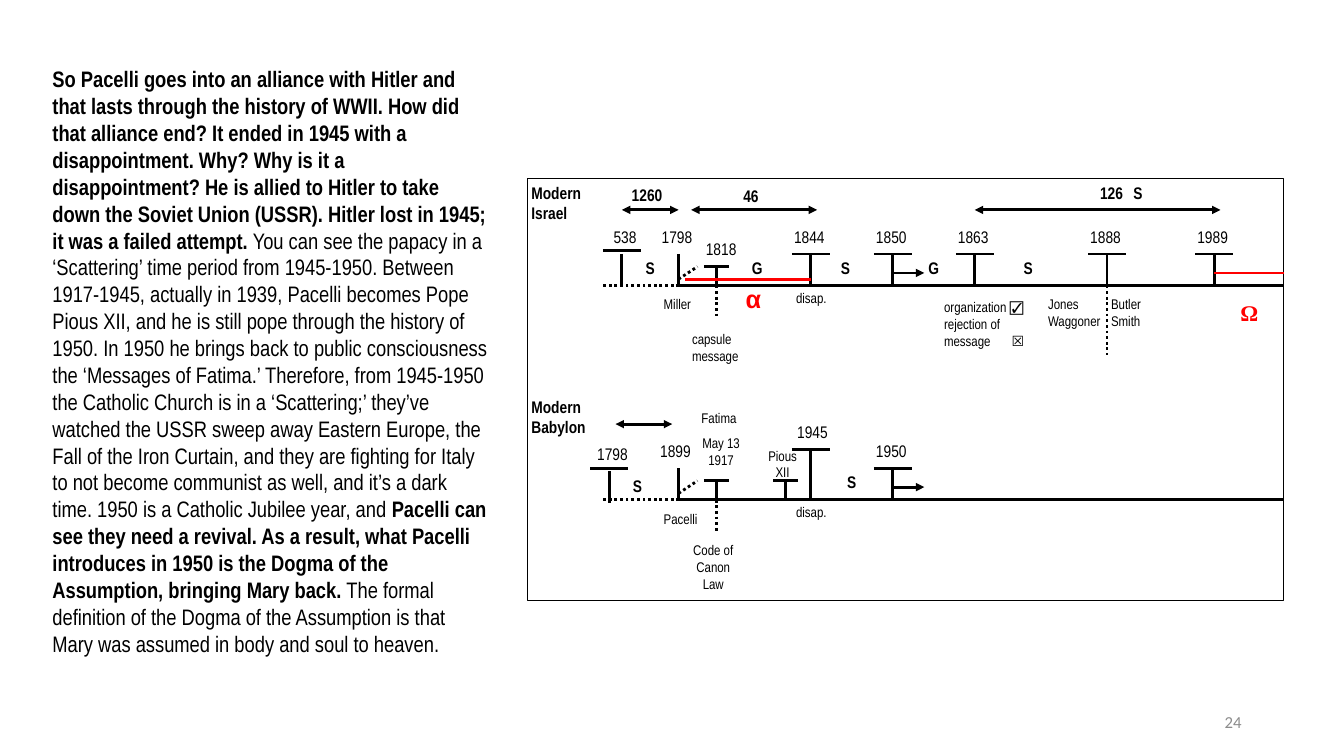
from lxml import etree
from pptx import Presentation
from pptx.dml.color import RGBColor
from pptx.enum.dml import MSO_LINE
from pptx.enum.shapes import MSO_CONNECTOR, MSO_SHAPE
from pptx.enum.text import MSO_ANCHOR, MSO_AUTO_SIZE, PP_ALIGN
from pptx.oxml.ns import qn
from pptx.util import Inches, Pt

STRAIGHT = MSO_CONNECTOR.STRAIGHT
RECTANGLE = MSO_SHAPE.RECTANGLE
DOTTED = MSO_LINE.ROUND_DOT
TOP, MIDDLE = MSO_ANCHOR.TOP, MSO_ANCHOR.MIDDLE
LEFT, CENTER, RIGHT = PP_ALIGN.LEFT, PP_ALIGN.CENTER, PP_ALIGN.RIGHT
NO_FIT = MSO_AUTO_SIZE.NONE

COLORS = {"ink": "000000", "accent": "FF0000", "muted": "8C8C8C"}
NARROW = "Arial Narrow"


def style(size, bold=False, name=NARROW, color="ink"):
    return {"format": {"size": Pt(size), "bold": bold, "name": name}, "color": color}


STYLES = {
    "year": style(12),
    "mark": style(12, True),
    "note": style(10),
    "check": style(10, name="Arial"),
    "alpha": style(18, True, "Arial", "accent"),
    "omega": style(16, True, "Times New Roman", "accent"),
    "number": style(12, name="Calibri", color="muted"),
    "strong": style(16, True),
    "plain": style(16),
}


class TimelinePage:
    unit = 1 / 16
    left, top = 5.23, 1.77
    columns, rows = 120, 67

    def __init__(self, deck):
        self.page = deck.slides.add_slide(deck.slide_layouts[1])
        self.shapes = self.page.shapes

    def x(self, column):
        return Inches(self.left + column * self.unit)

    def y(self, row):
        return Inches(self.top + row * self.unit)

    def length(self, count):
        return Inches(count * self.unit)

    def color(self, name):
        return RGBColor.from_string(COLORS[name])

    def add_spans(self, para, spans):
        for text, look in spans:
            span = para.add_run()
            span.text = text
            for key, value in STYLES[look]["format"].items():
                setattr(span.font, key, value)
            span.font.color.rgb = self.color(STYLES[look]["color"])

    def frame(self):
        box = self.shapes.add_shape(RECTANGLE, self.x(0), self.y(0),
                                    self.length(self.columns), self.length(self.rows))
        box.shadow.inherit = False
        box.fill.background()
        box.line.color.rgb = self.color("ink")
        box.line.width = Pt(0.25)

    def line(self, start, end, color="ink", dotted=False, arrows=()):
        connector = self.shapes.add_connector(
            STRAIGHT, self.x(start[0]), self.y(start[1]), self.x(end[0]), self.y(end[1]))
        connector.line.color.rgb = self.color(color)
        connector.line.width = Pt(2)
        if dotted:
            connector.line.dash_style = DOTTED
        properties = connector.element.spPr
        for arrow in arrows:
            etree.SubElement(properties.find(qn("a:ln")), qn(f"a:{arrow}"), type="triangle")
        etree.SubElement(properties, qn("a:effectLst"))

    def stem(self, column, top, base, half=0):
        self.line((column, top), (column, base))
        if half:
            self.line((column - half, top), (column + half, top))

    def label(self, lines, look, column, row, width, height,
              align=LEFT, anchor=TOP, tab=None):
        box = self.shapes.add_textbox(self.x(column), self.y(row),
                                      self.length(width), self.length(height))
        frame = box.text_frame
        margins = dict.fromkeys(
            ("margin_left", "margin_right", "margin_top", "margin_bottom"), Inches(0.04))
        for key, value in {"word_wrap": True, "vertical_anchor": anchor, **margins}.items():
            setattr(frame, key, value)
        for index, line in enumerate(lines):
            para = frame.add_paragraph() if index else frame.paragraphs[0]
            para.alignment = align
            if tab:
                stops = etree.SubElement(para._p.get_or_add_pPr(), qn("a:tabLst"))
                etree.SubElement(stops, qn("a:tab"), pos=str(Inches(tab)), algn="l")
            self.add_spans(para, [(line, look)] if isinstance(line, str) else line)

    def passage(self, spans):
        title = self.shapes.title
        title.element.getparent().remove(title.element)
        body = self.page.placeholders[1]
        place = {"left": 0.42, "top": 0.6, "width": 4.53, "height": 6.02}
        for key, value in place.items():
            setattr(body, key, Inches(value))
        body.text_frame.auto_size = NO_FIT
        para = body.text_frame.paragraphs[0]
        para.space_before = Pt(0)
        settings = para._p.get_or_add_pPr()
        settings.set("marL", "0")
        settings.set("indent", "0")
        etree.SubElement(settings, qn("a:buNone"))
        self.add_spans(para, spans)


PASSAGE = [
    ("So Pacelli goes into an alliance with Hitler and that lasts through the history of WWII. "
     "How did that alliance end? It ended in 1945 with a disappointment. Why? Why is it a "
     "disappointment? He is allied to Hitler to take down the Soviet Union (USSR). Hitler lost "
     "in 1945; it was a failed attempt.", "strong"),
    (" You can see the papacy in a ‘Scattering’ time period from 1945-1950. Between 1917-1945, "
     "actually in 1939, Pacelli becomes Pope Pious XII, and he is still pope through the history "
     "of 1950. In 1950 he brings back to public consciousness the ‘Messages of Fatima.’ "
     "Therefore, from 1945-1950 the Catholic Church is in a ‘Scattering;’ they’ve watched the "
     "USSR sweep away Eastern Europe, the Fall of the Iron Curtain, and they are fighting for "
     "Italy to not become communist as well, and it’s a dark time. 1950 is a Catholic Jubilee "
     "year, and ", "plain"),
    ("Pacelli can see they need a revival. As a result, what Pacelli introduces in 1950 is the "
     "Dogma of the Assumption, bringing Mary back.", "strong"),
    (" The formal definition of the Dogma of the Assumption is that Mary was assumed in body "
     "and soul to heaven.", "plain"),
]
ISRAEL, BABYLON = 17, 51
STEMS = {
    ISRAEL: [(24, 12, 0), (30, 14, 2)] + [(column, 12, 3) for column in (45, 58, 71, 92, 109)],
    BABYLON: [(24, 46, 0), (30, 48, 2), (41, 48, 2), (45, 43, 3), (58, 46, 3)],
}
PERIODS = [(15, 24, 5), (26, 46, 5), (71, 110, 5), (14, 23, 39)]
YEARS = [("538", 11.75, 7), ("1798", 20, 7), ("1818", 27, 9), ("1844", 41, 7),
         ("1850", 54, 7), ("1863", 67, 7), ("1888", 88, 7), ("1989", 105, 7),
         ("1798", 9.75, 41.5), ("1899", 19.75, 41), ("1945", 41.5, 38), ("1950", 54, 41)]
MARKS = [("S", 17, 12), ("G", 34, 12), ("S", 48, 12), ("G", 62, 12), ("S", 77, 12),
         ("S", 15, 46.5), ("S", 49, 46), ("46", 33, 0.5)]
NOTES = [
    (["Miller"], 21, 18, 7, LEFT), (["Pacelli"], 21, 52, 7, LEFT),
    (["disap."], 42, 17, 7, LEFT), (["disap."], 42, 51, 7, LEFT),
    (["Jones", "Waggoner"], 82, 18, 10, LEFT), (["Butler", "Smith"], 92, 18, 10, LEFT),
    (["capsule message"], 25.5, 23.5, 9, LEFT), (["Fatima"], 27, 36, 8, LEFT),
    (["May 13", "1917"], 27, 40, 7.5, CENTER), (["Pious XII"], 37, 42, 7, CENTER),
    (["Code of Canon Law"], 25, 57, 9, CENTER),
]


def main():
    deck = Presentation()
    deck.slide_width, deck.slide_height = Inches(13.33), Inches(7.5)
    page = TimelinePage(deck)
    page.passage(PASSAGE)
    page.frame()

    for base, stems in STEMS.items():
        page.line((24, base), (page.columns, base))
        page.line((25, base), (12, base), dotted=True)
        page.line((24, base - 1), (27, base - 3), dotted=True)
        page.line((30, base), (30, base + 5), dotted=True)
        page.line((58, base - 2), (63, base - 2), arrows=["tailEnd"])
        for column, top, half in stems:
            page.stem(column, top, base, half)
    for column, cap, top in ((15, 11.5, 12), (13, 46, 46.5)):
        page.line((column - 3, cap), (column + 3, cap))
        page.line((column, top), (column, top + 5))
    page.line((92, ISRAEL), (92, 28), dotted=True)
    for start, end, row in PERIODS:
        page.line((start, row), (end, row), arrows=["headEnd", "tailEnd"])
    page.line((25, 16), (45, 16), "accent")
    page.line((109, 15), (page.columns, 15), "accent")

    for text, column, row in YEARS:
        page.label([text], "year", column, row, 7.5, 4.5, CENTER)
    for text, column, row in MARKS:
        page.label([text], "mark", column, row, 5, 5, CENTER)
    for lines, column, row, width, align in NOTES:
        page.label(lines, "note", column, row, width, 7, align)
    for name, row in (("Israel", 0), ("Babylon", 34)):
        page.label(["Modern", name], "mark", 0, row, 10.25, 7.5)
    page.label(["1260"], "mark", 15.25, 0.3, 7.5, 5, CENTER)
    page.label(["126\tS"], "mark", 90.25, 0, 9.75, 5, tab=0.33)
    page.label(["α"], "alpha", 34, 16, 5, 6.5)
    page.label(["Ω"], "omega", 112.5, 18.5, 5, 6)
    page.label([[("organization ", "note"), ("☑", "check")],
                [("rejection of message\t", "note"), ("☒", "check")]],
               "note", 65.5, 18.5, 15, 10, tab=0.67)
    page.label(["24"], "number", 67, 83, 47, 6.4, RIGHT, MIDDLE)
    deck.save("out.pptx")


if __name__ == "__main__":
    main()
